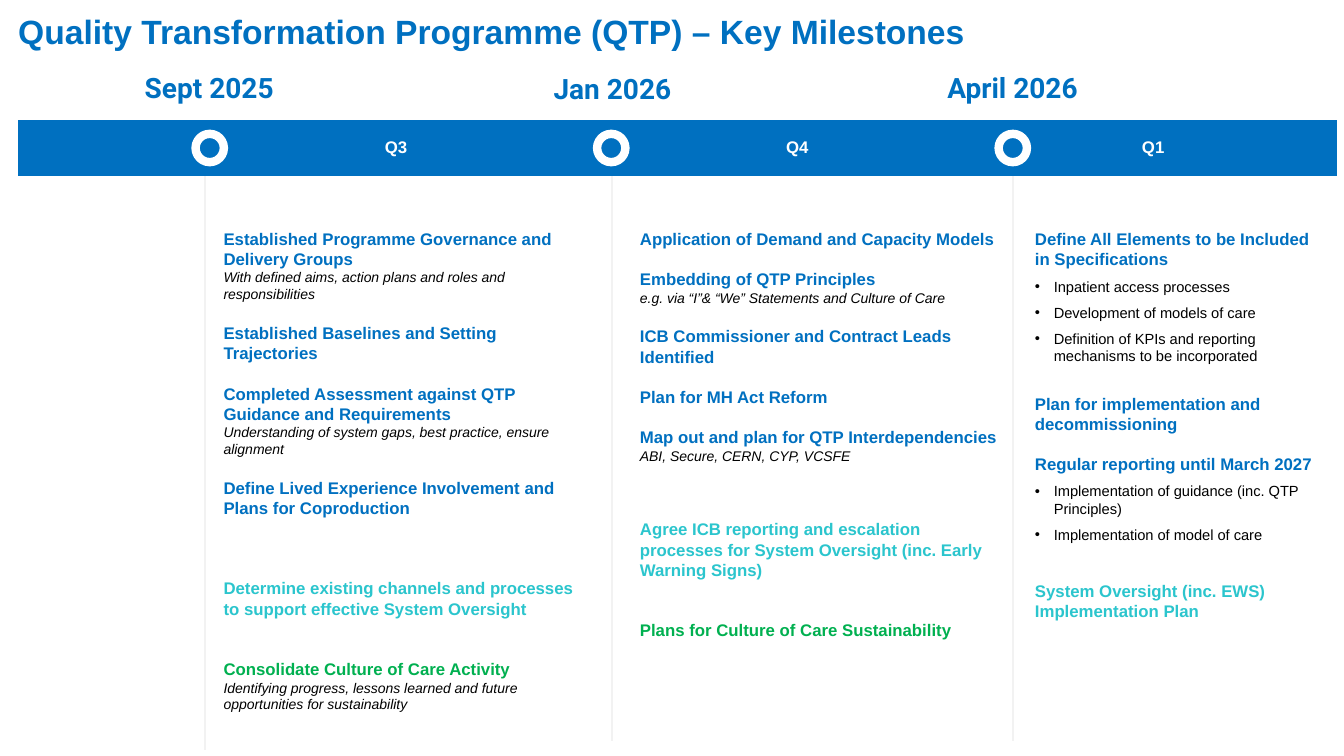
from lxml.etree import SubElement
from pptx import Presentation
from pptx.dml.color import RGBColor
from pptx.enum.shapes import MSO_CONNECTOR, MSO_SHAPE
from pptx.enum.text import MSO_ANCHOR as Anchor, MSO_AUTO_SIZE as AutoSize, PP_ALIGN as Align
from pptx.oxml.ns import qn
from pptx.util import Pt

BLUE = RGBColor(0x00, 0x70, 0xC0)
TEAL = RGBColor(0x2B, 0xC5, 0xCD)
GREEN = RGBColor(0x00, 0xB0, 0x50)
BLACK = RGBColor(0, 0, 0)
WHITE = RGBColor(255, 255, 255)
PALE_GREY = RGBColor(0xF2, 0xF2, 0xF2)
LINE = 14.4  # height of one 12 pt line, used as the gap between items

# Text styles: size, bold, italic
HEADING = (12, True, False)
DETAIL = (10, False, True)
BULLET = (10.5, False, False)


def add_box(left, top, width, height):
    box = slide.shapes.add_textbox(Pt(left), Pt(top), Pt(width), Pt(height))
    box.text_frame.word_wrap = True
    return box.text_frame


def format_text(paragraph, text, style, color, name="Arial"):
    paragraph.text = text
    font = paragraph.font
    font.name = name
    font.size, font.bold, font.italic = Pt(style[0]), style[1], style[2]
    font.color.rgb = color


prs = Presentation()
prs.slide_width, prs.slide_height = Pt(960), Pt(540)
slide = prs.slides.add_slide(prs.slide_layouts[5])

# Title
title = slide.shapes.title
title.left, title.top, title.width, title.height = Pt(5.8), Pt(4.3), Pt(862.6), Pt(36)
title.text_frame.auto_size = AutoSize.NONE
title.text_frame.vertical_anchor = Anchor.TOP
heading = title.text_frame.paragraphs[0]
heading.alignment = Align.LEFT
format_text(heading, "Quality Transformation Programme (QTP) – Key Milestones",
            (24, True, False), BLUE)

# Column dividers: x, top, bottom
for x, top, bottom in [(146.2, 109.4, 535.7), (437, 103, 529.2), (723.6, 92.2, 529.2)]:
    divider = slide.shapes.add_connector(MSO_CONNECTOR.STRAIGHT, Pt(x), Pt(top), Pt(x), Pt(bottom))
    divider.line.color.rgb = PALE_GREY
    divider.line.width = Pt(1.5)
    SubElement(divider._element.spPr, qn("a:effectLst"))

# Timeline bar
bar = slide.shapes.add_shape(MSO_SHAPE.FLOWCHART_PROCESS, Pt(13), Pt(85.9), Pt(941.8), Pt(39.9))
bar.shadow.inherit = False
bar.fill.solid()
bar.fill.fore_color.rgb = BLUE
bar.line.fill.background()

# Milestones: date, left and top of its box; quarter, left of its label
milestones = [
    ("Sept 2025", 13, 5, "Q3", 249.8),
    ("Jan 2026", 301, 5.8, "Q4", 536.4),
    ("April 2026", 586.8, 5, "Q1", 790.6),
]
for index, (date, date_left, date_top, quarter, quarter_left) in enumerate(milestones):
    ring = slide.shapes.add_shape(
        MSO_SHAPE.OVAL, Pt(139.7 + 286.8 * index), Pt(95.6), Pt(20.2), Pt(20.2))
    ring.shadow.inherit = False
    ring.fill.solid()
    ring.fill.fore_color.rgb = BLUE
    ring.line.color.rgb = WHITE
    ring.line.width = Pt(6)

    date_frame = add_box(date_left, date_top, 272.9, 80.6)
    date_frame.vertical_anchor = Anchor.BOTTOM
    date_frame.margin_left = date_frame.margin_right = Pt(11.5)
    date_frame.margin_top = date_frame.margin_bottom = Pt(11.5)
    date_line = date_frame.paragraphs[0]
    date_line.alignment = Align.CENTER
    date_line.line_spacing = 0.9
    format_text(date_line, date, (20, True, False), BLUE, "Roboto")

    quarter_line = add_box(quarter_left, 94.3, 66.2, 21.6).paragraphs[0]
    quarter_line.alignment = Align.CENTER
    format_text(quarter_line, quarter, HEADING, WHITE)

# Activities per column: text, style, colour, space before
autumn = [
    ("Established Programme Governance and Delivery Groups", HEADING, BLUE, 0),
    ("With defined aims, action plans and roles and responsibilities", DETAIL, BLACK, 0),
    ("Established Baselines and Setting Trajectories", HEADING, BLUE, LINE),
    ("Completed Assessment against QTP Guidance and Requirements", HEADING, BLUE, LINE),
    ("Understanding of system gaps, best practice, ensure alignment", DETAIL, BLACK, 0),
    ("Define Lived Experience Involvement and Plans for Coproduction", HEADING, BLUE, LINE),
    ("Determine existing channels and processes to support effective System Oversight",
     HEADING, TEAL, 3 * LINE),
    ("Consolidate Culture of Care Activity", HEADING, GREEN, 2 * LINE),
    ("Identifying progress, lessons learned and future opportunities for sustainability",
     DETAIL, BLACK, 0),
]
winter = [
    ("Application of Demand and Capacity Models", HEADING, BLUE, 0),
    ("Embedding of QTP Principles", HEADING, BLUE, LINE),
    ("e.g. via “I”& “We” Statements and Culture of Care", DETAIL, BLACK, 0),
    ("ICB Commissioner and Contract Leads Identified", HEADING, BLUE, LINE),
    ("Plan for MH Act Reform", HEADING, BLUE, LINE),
    ("Map out and plan for QTP Interdependencies", HEADING, BLUE, LINE),
    ("ABI, Secure, CERN, CYP, VCSFE", DETAIL, BLACK, 0),
    ("Agree ICB reporting and escalation processes for System Oversight "
     "(inc. Early Warning Signs)", HEADING, TEAL, 2 * LINE + 10.6),
    ("Plans for Culture of Care Sustainability", HEADING, GREEN, 2 * LINE),
]
spring = [
    ("Define All Elements to be Included in Specifications", HEADING, BLUE, 0),
    ("Inpatient access processes", BULLET, BLACK, 6),
    ("Development of models of care", BULLET, BLACK, 6),
    ("Definition of KPIs and reporting mechanisms to be incorporated", BULLET, BLACK, 6),
    ("Plan for implementation and decommissioning", HEADING, BLUE, LINE + 6),
    ("Regular reporting until March 2027", HEADING, BLUE, LINE),
    ("Implementation of guidance (inc. QTP Principles)", BULLET, BLACK, 6),
    ("Implementation of model of care", BULLET, BLACK, 6),
    ("System Oversight (inc. EWS) Implementation Plan", HEADING, TEAL, LINE + 12),
]
columns = [(152.6, 272.9, 356.4, autumn), (450, 272.9, 303.8, winter), (732.2, 223.2, 327.6, spring)]
for left, width, height, activities in columns:
    column = add_box(left, 159.8, width, height)
    for index, (text, style, color, gap) in enumerate(activities):
        activity = column.add_paragraph() if index else column.paragraphs[0]
        if style is BULLET:
            properties = activity._p.get_or_add_pPr()
            properties.set("marL", str(Pt(13.5)))
            properties.set("indent", str(-Pt(13.5)))
            SubElement(properties, qn("a:buFont"), typeface="Arial")
            SubElement(properties, qn("a:buChar"), char="•")
        if gap:
            activity.space_before = Pt(gap)
        format_text(activity, text, style, color)

prs.save("out.pptx")
